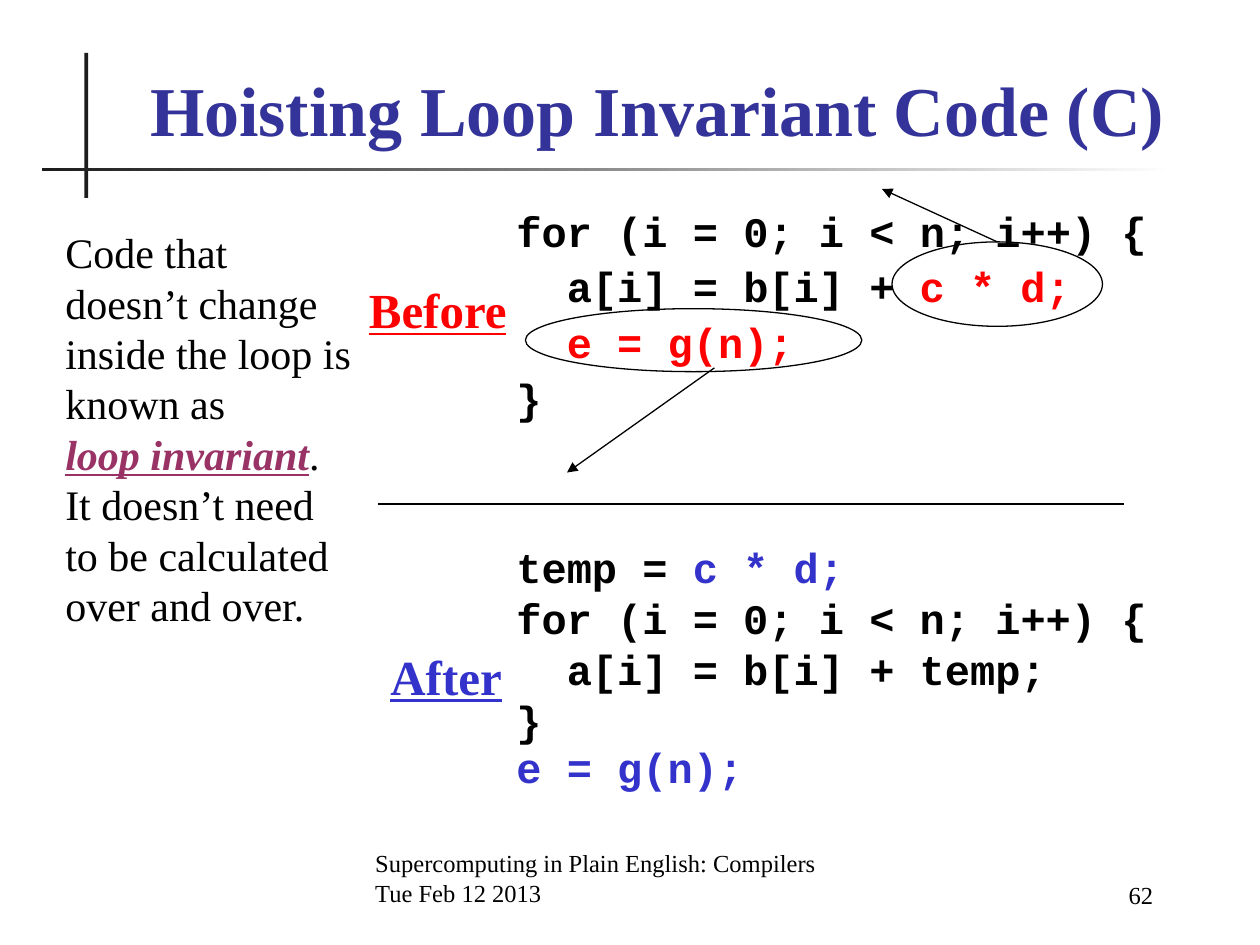
import lxml.etree
import pptx
import pptx.dml.color
import pptx.enum.shapes
import pptx.enum.text
import pptx.oxml.ns
import pptx.util

Inches = pptx.util.Inches
Pt = pptx.util.Pt
Shape = pptx.enum.shapes.MSO_SHAPE
Align = pptx.enum.text.PP_ALIGN
Anchor = pptx.enum.text.MSO_ANCHOR


class Theme:
    serif, mono = "Times New Roman", "Courier New"
    black, bar, white = "000000", "1C1C1C", "FFFFFF"
    title, before, after, term = "333399", "FF0000", "3333CC", "993366"
    title_size, label_size, text_size, footer_size = 40, 28, 24, 14
    thin, code_gap = 0.75, 6


def rgb(value):
    return pptx.dml.color.RGBColor.from_string(value)


def add_text(page, place, paragraphs, *, size, font=Theme.serif, color=Theme.black,
             bold=False, underline=False, align=Align.LEFT, anchor=Anchor.TOP,
             wrap=True, gap=0, line_spacing=None, top_inset=0.05):
    """Each paragraph is a list of (text, format) spans; format overrides the defaults."""
    box = page.shapes.add_textbox(*map(Inches, place))
    frame = box.text_frame
    frame.word_wrap = wrap
    frame.vertical_anchor = anchor
    frame.margin_top = Inches(top_inset)
    for index, spans in enumerate(paragraphs):
        para = frame.paragraphs[0] if index == 0 else frame.add_paragraph()
        para.alignment = align
        if index:
            para.space_before = Pt(gap)
        if line_spacing:
            para.line_spacing = line_spacing[index]
        for text, look in spans:
            look = {"color": color, "bold": bold, "italic": False,
                    "underline": underline, **look}
            span = para.add_run()
            span.text = text
            span.font.name = font
            span.font.size = Pt(size)
            span.font.color.rgb = rgb(look["color"])
            span.font.bold = look["bold"]
            span.font.italic = look["italic"]
            span.font.underline = look["underline"]
            if look.get("break_after"):
                para.add_line_break()
    return box


def add_code(page, place, lines, line_spacing):
    add_text(page, place, lines, size=Theme.text_size, font=Theme.mono, bold=True,
             gap=Theme.code_gap, line_spacing=line_spacing, top_inset=0.13)


def add_label(page, place, text, color):
    add_text(page, place, [[(text, {})]], size=Theme.label_size, color=color,
             bold=True, underline=True, wrap=False)


def add_bar(page, place, fade_to=None):
    bar = page.shapes.add_shape(Shape.RECTANGLE, *map(Inches, place))
    bar.shadow.inherit = False
    bar.line.fill.background()
    if fade_to:
        bar.fill.gradient()
        bar.fill.gradient_angle = 0
        for stop, color in zip(bar.fill.gradient_stops, (Theme.bar, fade_to)):
            stop.color.rgb = rgb(color)
    else:
        bar.fill.solid()
        bar.fill.fore_color.rgb = rgb(Theme.bar)


def add_ring(page, place):
    ring = page.shapes.add_shape(Shape.OVAL, *map(Inches, place))
    ring.shadow.inherit = False
    ring.fill.background()
    ring.line.color.rgb = rgb(Theme.black)
    ring.line.width = Pt(Theme.thin)
    return ring


def add_line(page, start, end, *, arrow=False, ring=None):
    line = page.shapes.add_connector(pptx.enum.shapes.MSO_CONNECTOR.STRAIGHT,
                                     *map(Inches, (*start, *end)))
    line.line.color.rgb = rgb(Theme.black)
    line.line.width = Pt(Theme.thin)
    qn = pptx.oxml.ns.qn
    if arrow:
        lxml.etree.SubElement(line.line._get_or_add_ln(), qn("a:tailEnd"), type="triangle")
    lxml.etree.SubElement(line._element.spPr, qn("a:effectLst"))
    if ring is not None:
        line.begin_connect(ring, 0)


def main():
    deck = pptx.Presentation()
    deck.slide_width, deck.slide_height = Inches(10), Inches(7.5)
    page = deck.slides.add_slide(deck.slide_layouts[6])

    # Frame bars, title and footer
    add_bar(page, (0.67, 0.42, 0.03, 1.15))
    add_bar(page, (0.33, 1.33, 9, 0.03), fade_to=Theme.white)
    add_text(page, (0.83, 0.5, 8.77, 0.74), [[("Hoisting Loop Invariant Code (C)", {})]],
             size=Theme.title_size, color=Theme.title, bold=True,
             align=Align.CENTER, anchor=Anchor.BOTTOM)
    add_text(page, (2.88, 6.75, 4.37, 0.5),
             [[("Supercomputing in Plain English: Compilers", {})],
              [("Tue Feb 12 2013", {})]],
             size=Theme.footer_size, anchor=Anchor.BOTTOM)
    add_text(page, (7.83, 6.77, 1.42, 0.5), [[("62", {})]],
             size=Theme.footer_size, align=Align.RIGHT, anchor=Anchor.BOTTOM)

    # Explanation
    add_text(page, (0.42, 1.75, 2.5, 3.3), [[
        ("Code that doesn’t change inside the loop is known as", {"break_after": True}),
        ("loop invariant", {"color": Theme.term, "bold": True,
                            "italic": True, "underline": True}),
        (". It doesn’t need to be calculated over and over.", {}),
    ]], size=Theme.text_size)

    # Code before and after hoisting
    red, blue = {"color": Theme.before}, {"color": Theme.after}
    loop_start, loop_end = [("for (i = 0; i < n; i++) {", {})], [("}", {})]
    add_code(page, (4, 1.5, 5.42, 2.67), [
        loop_start,
        [("  a[i] = b[i] + ", {}), ("c * d;", red)],
        [("  e = g(n);", red)],
        loop_end,
    ], (1, 0.9, 0.9, 0.9))
    add_label(page, (2.83, 2.17, 1.3, 0.57), "Before", Theme.before)
    add_code(page, (4, 4.17, 5.33, 2.58), [
        [("temp = ", {}), ("c * d;", blue)],
        loop_start,
        [("  a[i] = b[i] + temp;", {})],
        loop_end,
        [("e = g(n);", blue)],
    ], (1, 0.8, 0.8, 0.8, 0.7))
    add_label(page, (3, 5.08, 1.09, 0.57), "After", Theme.after)

    # Rings round the invariant code, arrows and divider
    product_ring = add_ring(page, (7.08, 1.92, 1.67, 0.67))
    add_line(page, (7.92, 1.92), (7, 1.5), arrow=True, ring=product_ring)
    add_ring(page, (4.17, 2.45, 2.67, 0.5))
    add_line(page, (5.67, 2.92), (4.5, 3.75), arrow=True)
    add_line(page, (3, 4), (8.92, 4))

    deck.save("out.pptx")


if __name__ == "__main__":
    main()
